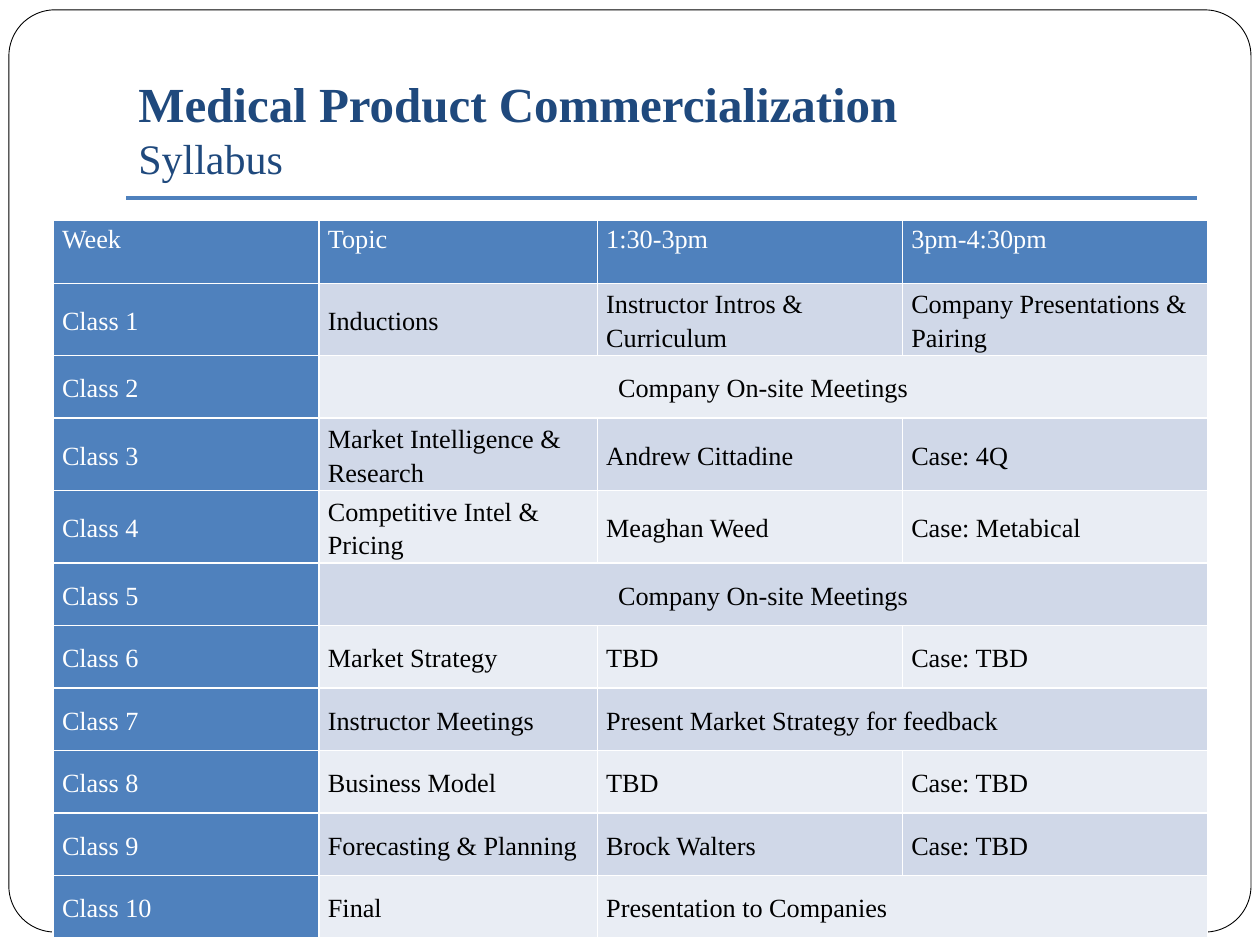
from lxml.etree import SubElement
from pptx import Presentation
from pptx.dml.color import RGBColor
from pptx.enum.shapes import MSO_CONNECTOR, MSO_SHAPE
from pptx.enum.text import MSO_ANCHOR as ANCHOR, PP_ALIGN as ALIGN
from pptx.oxml.ns import qn
from pptx.util import Cm, Pt

WHITE = RGBColor(0xFF, 0xFF, 0xFF)
BLACK = RGBColor(0x00, 0x00, 0x00)
NAVY = RGBColor(0x1F, 0x49, 0x7D)
BLUE = RGBColor(0x4F, 0x81, 0xBD)
BANDS = (RGBColor(0xE9, 0xED, 0xF4), RGBColor(0xD0, 0xD8, 0xE8))

FONT = "Times New Roman"
ONSITE = "Company On-site Meetings"
SYLLABUS = (
    ("Week", "Topic", "1:30-3pm", "3pm-4:30pm"),
    ("Class 1", "Inductions", "Instructor Intros & Curriculum",
     "Company Presentations & Pairing"),
    ("Class 2", ONSITE),
    ("Class 3", "Market Intelligence & Research", "Andrew Cittadine", "Case: 4Q"),
    ("Class 4", "Competitive Intel & Pricing", "Meaghan Weed", "Case: Metabical"),
    ("Class 5", ONSITE),
    ("Class 6", "Market Strategy", "TBD", "Case: TBD"),
    ("Class 7", "Instructor Meetings", "Present Market Strategy for feedback"),
    ("Class 8", "Business Model", "TBD", "Case: TBD"),
    ("Class 9", "Forecasting & Planning", "Brock Walters", "Case: TBD"),
    ("Class 10", "Final", "Presentation to Companies"),
)
COL_WIDTHS = (5.36, 5.61, 6.15, 6.15)
ROW_HEIGHT, TALL_ROW_HEIGHT = 1.26, 1.42
TALL_ROWS = (1, 3, 4)


def set_attrs(obj, **values):
    """Set each given value as an attribute of the object."""
    for name, value in values.items():
        setattr(obj, name, value)


def add_run(p, text, size, color, bold=False):
    """Add a formatted run to a paragraph."""
    r = p.add_run()
    r.text = text
    set_attrs(r.font, name=FONT, size=Pt(size), bold=bold)
    r.font.color.rgb = color


def add_frame(slide):
    """Add the rounded outline around the slide."""
    sp = slide.shapes.add_shape(MSO_SHAPE.ROUNDED_RECTANGLE,
                                Cm(0.18), Cm(0.2), Cm(25.04), Cm(18.59))
    sp.adjustments[0] = 0.05
    sp.shadow.inherit = False
    sp.fill.solid()
    sp.fill.fore_color.rgb = WHITE
    sp.line.color.rgb = BLACK
    sp.line.width = Pt(0.5)


def add_rule(slide):
    """Add the line under the title."""
    line = slide.shapes.add_connector(MSO_CONNECTOR.STRAIGHT,
                                      Cm(2.54), Cm(3.99), Cm(24.13), Cm(3.99))
    line.line.color.rgb = BLUE
    line.line.width = Pt(2.75)
    SubElement(line._element.spPr, qn("a:effectLst"))


def add_title(slide):
    """Add the title and its subtitle line."""
    sp = slide.shapes.add_textbox(Cm(2.54), Cm(0.76), Cm(21.59), Cm(3.18))
    tf = sp.text_frame
    set_attrs(tf, word_wrap=True, vertical_anchor=ANCHOR.BOTTOM,
              margin_bottom=Cm(0.25))
    p = tf.paragraphs[0]
    add_run(p, "Medical Product Commercialization", 28, NAVY, bold=True)
    p.add_line_break()
    add_run(p, "Syllabus", 24, NAVY)


def add_borders(cell):
    """Draw thin white borders on a cell."""
    tc_pr = cell._tc.get_or_add_tcPr()
    for side in "LRTB":
        ln = SubElement(tc_pr, qn(f"a:ln{side}"), w=str(Pt(1)))
        fill = SubElement(ln, qn("a:solidFill"))
        SubElement(fill, qn("a:srgbClr"), val=str(WHITE))


def fill_cell(cell, text, row, col):
    """Fill a cell and write its text, styled by its place in the table."""
    heading = row == 0 or col == 0
    add_borders(cell)
    cell.fill.solid()
    cell.fill.fore_color.rgb = BLUE if heading else BANDS[row % 2]
    set_attrs(cell, margin_left=Cm(0.18), margin_right=Cm(0.18),
              margin_top=0, margin_bottom=0,
              vertical_anchor=ANCHOR.MIDDLE if row else ANCHOR.TOP)
    if text:
        p = cell.text_frame.paragraphs[0]
        set_attrs(p, line_spacing=1.15,
                  alignment=ALIGN.CENTER if text == ONSITE else ALIGN.LEFT)
        add_run(p, text, 15, WHITE if heading else BLACK)


def add_syllabus(slide):
    """Add the syllabus table, where a short row's last entry spans the rest."""
    n_cols = len(COL_WIDTHS)
    heights = [TALL_ROW_HEIGHT if i in TALL_ROWS else ROW_HEIGHT
               for i in range(len(SYLLABUS))]
    table = slide.shapes.add_table(len(SYLLABUS), n_cols, Cm(1.07), Cm(4.45),
                                   Cm(sum(COL_WIDTHS)), Cm(sum(heights))).table
    for column, width in zip(table.columns, COL_WIDTHS):
        column.width = Cm(width)
    for i, (entries, height) in enumerate(zip(SYLLABUS, heights)):
        table.rows[i].height = Cm(height)
        last = len(entries) - 1
        if last < n_cols - 1:
            table.cell(i, last).merge(table.cell(i, n_cols - 1))
        for j in range(n_cols):
            fill_cell(table.cell(i, j), entries[j] if j <= last else "", i, j)


def main():
    """Build the syllabus slide and save it."""
    prs = Presentation()
    set_attrs(prs, slide_width=Cm(25.4), slide_height=Cm(19.05))
    slide = prs.slides.add_slide(prs.slide_layouts[6])
    add_frame(slide)
    add_rule(slide)
    add_title(slide)
    add_syllabus(slide)
    prs.save("out.pptx")


if __name__ == "__main__":
    main()
